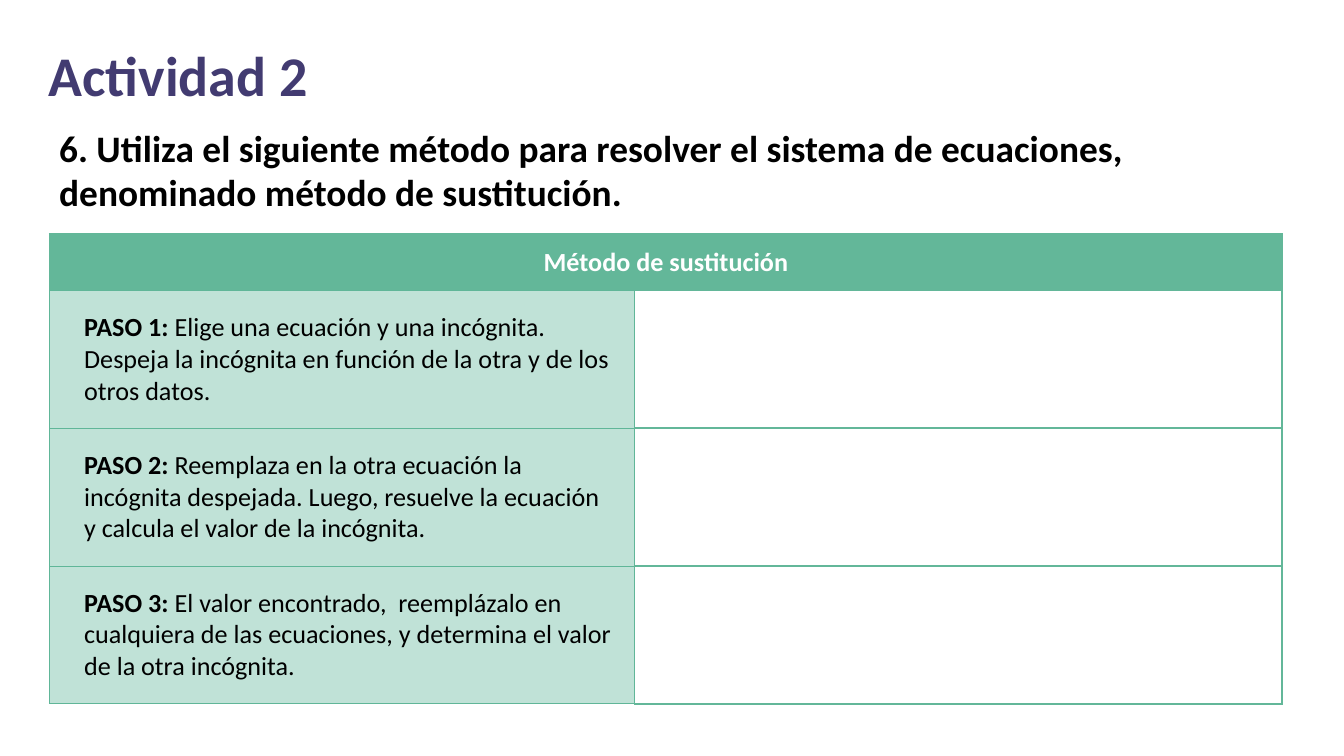
from dataclasses import dataclass

from lxml.etree import SubElement
from pptx import Presentation
from pptx.dml.color import RGBColor
from pptx.enum.text import MSO_ANCHOR, PP_ALIGN
from pptx.oxml.ns import qn
from pptx.util import Cm, Pt


@dataclass(frozen=True)
class Theme:
    font: str = "Calibri"
    title: str = "423B71"
    ink: str = "000000"
    white: str = "FFFFFF"
    header: str = "63B799"
    grid: str = "60B698"
    step: str = "C0E2D7"
    title_size: int = 30
    prompt_size: int = 20
    table_size: int = 14
    thin: float = 0.5
    thick: float = 1


@dataclass(frozen=True)
class TextBox:
    text: str
    left: float
    top: float
    width: float
    height: float
    size: int
    color: str


@dataclass(frozen=True)
class Step:
    label: str
    text: str


T = Theme()

HEADINGS = [
    TextBox("Actividad 2", 0.74, 0.66, 11.5, 1.47, T.title_size, T.title),
    TextBox("6. Utiliza el siguiente método para resolver el sistema de ecuaciones, "
            "denominado método de sustitución.",
            0.94, 2.26, 20.98, 1.9, T.prompt_size, T.ink),
]
METHOD = "Método de sustitución"
STEPS = [
    Step("PASO 1: ", "Elige una ecuación y una incógnita. Despeja la incógnita "
                     "en función de la otra y de los otros datos."),
    Step("PASO 2: ", "Reemplaza en la otra ecuación la incógnita despejada. Luego, "
                     "resuelve la ecuación y calcula el valor de la incógnita."),
    Step("PASO 3: ", "El valor encontrado,  reemplázalo en cualquiera de las "
                     "ecuaciones, y determina el valor de la otra incógnita."),
]
COLUMNS = (11.05, 12.24)
HEADER_HEIGHT, STEP_HEIGHT = 1.07, 2.58


def style(p, size: int, color: str) -> None:
    p.font.name = T.font
    p.font.size = Pt(size)
    p.font.color.rgb = RGBColor.from_string(color)


def set_margins(box, x: float, y: float) -> None:
    box.margin_left = box.margin_right = Cm(x)
    box.margin_top = box.margin_bottom = Cm(y)


def add_text(s, box: TextBox) -> None:
    sp = s.shapes.add_textbox(Cm(box.left), Cm(box.top), Cm(box.width), Cm(box.height))
    tf = sp.text_frame
    tf.word_wrap = True
    set_margins(tf, 0.18, 0.1)
    p = tf.paragraphs[0]
    p.text = box.text
    p.font.bold = True
    style(p, box.size, box.color)


def set_cell(cell, fill: str | None, thick_sides: str = "") -> None:
    """Border the cell on all sides, then fill it."""
    tcPr = cell._tc.get_or_add_tcPr()
    for side in "LRTB":
        thick = side in thick_sides
        ln = SubElement(tcPr, qn(f"a:ln{side}"), w=str(Pt(T.thick if thick else T.thin)))
        solid = SubElement(ln, qn("a:solidFill"))
        SubElement(solid, qn("a:srgbClr"), val=T.header if thick else T.grid)
    if fill:
        cell.fill.solid()
        cell.fill.fore_color.rgb = RGBColor.from_string(fill)
    else:
        cell.fill.background()
    cell.vertical_anchor = MSO_ANCHOR.MIDDLE


def add_step(cell, step: Step) -> None:
    set_cell(cell, T.step)
    set_margins(cell, 0.4, 0.4)
    p = cell.text_frame.paragraphs[0]
    p._p.get_or_add_pPr().set("marL", str(Cm(0.25)))
    for text, bold in ((step.label, True), (step.text, False)):
        r = p.add_run()
        r.text = text
        r.font.bold = bold
    style(p, T.table_size, T.ink)


def add_method_table(s) -> None:
    height = HEADER_HEIGHT + STEP_HEIGHT * len(STEPS)
    table = s.shapes.add_table(len(STEPS) + 1, len(COLUMNS), Cm(0.94), Cm(4.42),
                               Cm(sum(COLUMNS)), Cm(height)).table
    table.first_row = table.horz_banding = False
    for column, width in zip(table.columns, COLUMNS):
        column.width = Cm(width)
    for i, row in enumerate(table.rows):
        row.height = Cm(STEP_HEIGHT if i else HEADER_HEIGHT)

    # Header across both columns
    header = table.cell(0, 0)
    header.merge(table.cell(0, 1))
    for cell in table.rows[0].cells:
        set_cell(cell, T.header, "LRT")
    set_margins(header, 0.2, 0.1)
    p = header.text_frame.paragraphs[0]
    p.text = METHOD
    p.alignment = PP_ALIGN.CENTER
    p.font.bold = True
    style(p, T.table_size, T.white)

    # Steps on the left, room for answers on the right
    for i, step in enumerate(STEPS, 1):
        add_step(table.cell(i, 0), step)
        set_cell(table.cell(i, 1), None, "RTB")


def main() -> None:
    prs = Presentation()
    prs.slide_width, prs.slide_height = Cm(25.4), Cm(14.29)
    s = prs.slides.add_slide(prs.slide_layouts[6])
    add_method_table(s)
    for box in HEADINGS:
        add_text(s, box)
    prs.save("out.pptx")


if __name__ == "__main__":
    main()
